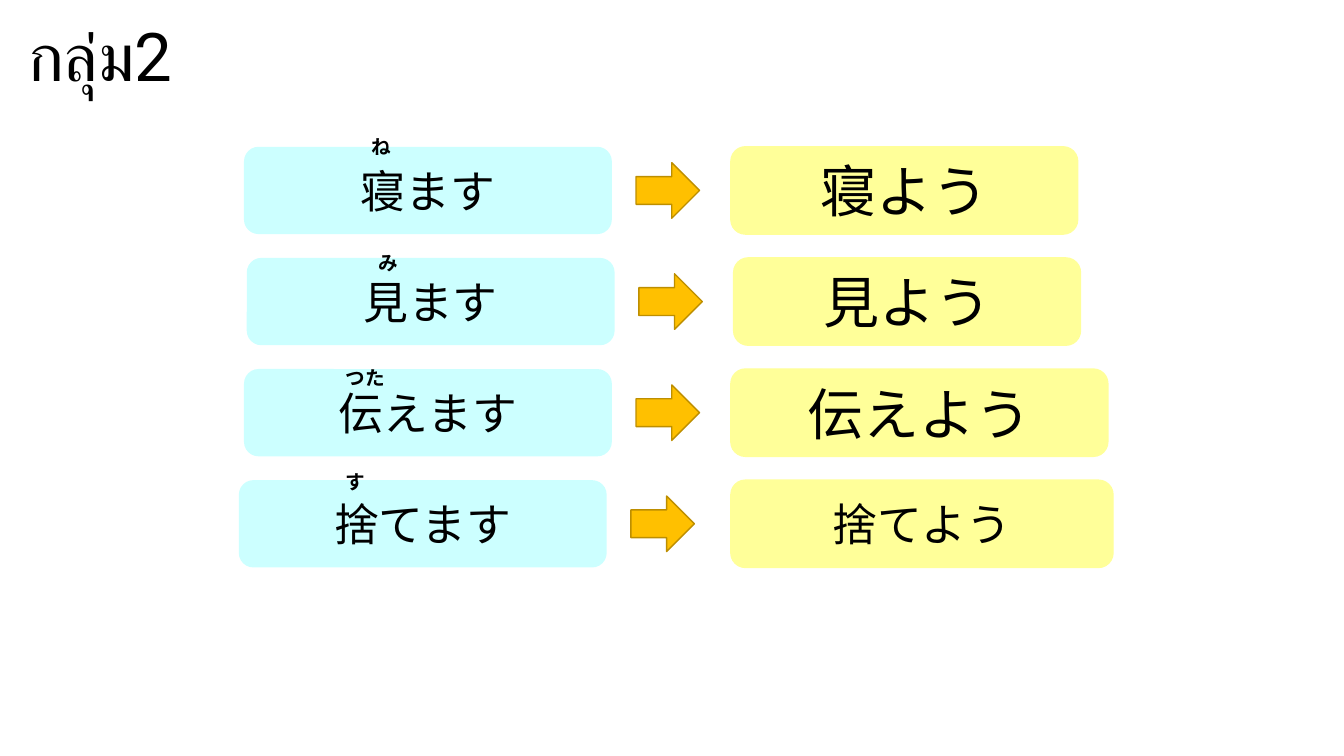
from typing import NamedTuple

from pptx import Presentation
from pptx.dml.color import RGBColor
from pptx.enum.shapes import MSO_SHAPE
from pptx.enum.text import MSO_ANCHOR, MSO_AUTO_SIZE, PP_ALIGN
from pptx.shapes.autoshape import Shape
from pptx.slide import Slide
from pptx.util import Cm, Pt

ROUND = MSO_SHAPE.ROUNDED_RECTANGLE
ARROW = MSO_SHAPE.RIGHT_ARROW
MIDDLE = MSO_ANCHOR.MIDDLE
GROW = MSO_AUTO_SIZE.SHAPE_TO_FIT_TEXT
CENTER = PP_ALIGN.CENTER
LEFT = PP_ALIGN.LEFT

BLACK = RGBColor(0x00, 0x00, 0x00)
CYAN = RGBColor(0xCC, 0xFF, 0xFF)
YELLOW = RGBColor(0xFF, 0xFF, 0x99)
GOLD = RGBColor(0xFF, 0xC0, 0x00)
BROWN = RGBColor(0xBD, 0x8E, 0x00)

# Grid of the verb rows, in centimetres
TOP, PITCH = 3.7, 2.8
BOX_W, BOX_H = 9.27, 2.2
ARROW_DX, ARROW_DY = 9.88, 0.4
ARROW_W, ARROW_H = 1.6, 1.4


class Box(NamedTuple):
    x: float
    y: float
    w: float
    h: float


class Verb(NamedTuple):
    polite: str
    left: float
    kana: str
    kana_x: float
    kana_y: float
    intent: str
    right: float
    width: float
    size: int


VERBS = [
    Verb("寝ます", 6.15, "ね", 9.12, 3.28, "寝よう", 18.42, 8.74, 40),
    Verb("見ます", 6.22, "み", 9.3, 6.2, "見よう", 18.49, 8.74, 40),
    Verb("伝えます", 6.15, "つた", 8.46, 9.09, "伝えよう", 18.42, 9.5, 40),
    Verb("捨てます", 6.02, "す", 8.46, 11.71, "捨てよう", 18.42, 9.63, 32),
]


def write(shape: Shape, text: str, font: str, size: int,
          align: PP_ALIGN, bold: bool = False) -> None:
    para = shape.text_frame.paragraphs[0]
    para.text = text
    para.alignment = align
    para.font.name = font
    para.font.size = Pt(size)
    para.font.bold = bold
    para.font.color.rgb = BLACK


def block(slide: Slide, kind: MSO_SHAPE, box: Box, fill: RGBColor,
          line: RGBColor | None = None) -> Shape:
    shape = slide.shapes.add_shape(kind, *map(Cm, box))
    shape.shadow.inherit = False
    shape.fill.solid()
    shape.fill.fore_color.rgb = fill
    if line is None:
        shape.line.fill.background()
    else:
        shape.line.color.rgb = line
        shape.line.width = Pt(1)
    shape.text_frame.vertical_anchor = MIDDLE
    return shape


def label(slide: Slide, box: Box, text: str, font: str, size: int,
          bold: bool = False) -> None:
    shape = slide.shapes.add_textbox(*map(Cm, box))
    shape.text_frame.word_wrap = True
    shape.text_frame.auto_size = GROW
    write(shape, text, font, size, LEFT, bold)


def row(slide: Slide, verb: Verb, top: float) -> None:
    polite = block(slide, ROUND, Box(verb.left, top, BOX_W, BOX_H), CYAN)
    write(polite, verb.polite, "Lato", 32, CENTER)
    block(slide, ARROW, Box(verb.left + ARROW_DX, top + ARROW_DY,
                            ARROW_W, ARROW_H), GOLD, BROWN)
    intent = block(slide, ROUND, Box(verb.right, top, verb.width, BOX_H),
                   YELLOW, YELLOW)
    write(intent, verb.intent, "Lato", verb.size, CENTER)


def main() -> None:
    deck = Presentation()
    deck.slide_width, deck.slide_height = Cm(33.87), Cm(19.05)
    slide = deck.slides.add_slide(deck.slide_layouts[6])

    # Verb pairs
    for i, verb in enumerate(VERBS):
        row(slide, verb, TOP + i * PITCH)

    # Title
    label(slide, Box(0.46, 0.23, 8.36, 2.31), "กลุ่ม2", "Roboto", 48)

    # Readings above the kanji
    for verb in VERBS:
        label(slide, Box(verb.kana_x, verb.kana_y, 4.39, 0.86),
              verb.kana, "Arial", 14, True)

    deck.save("out.pptx")


if __name__ == "__main__":
    main()
